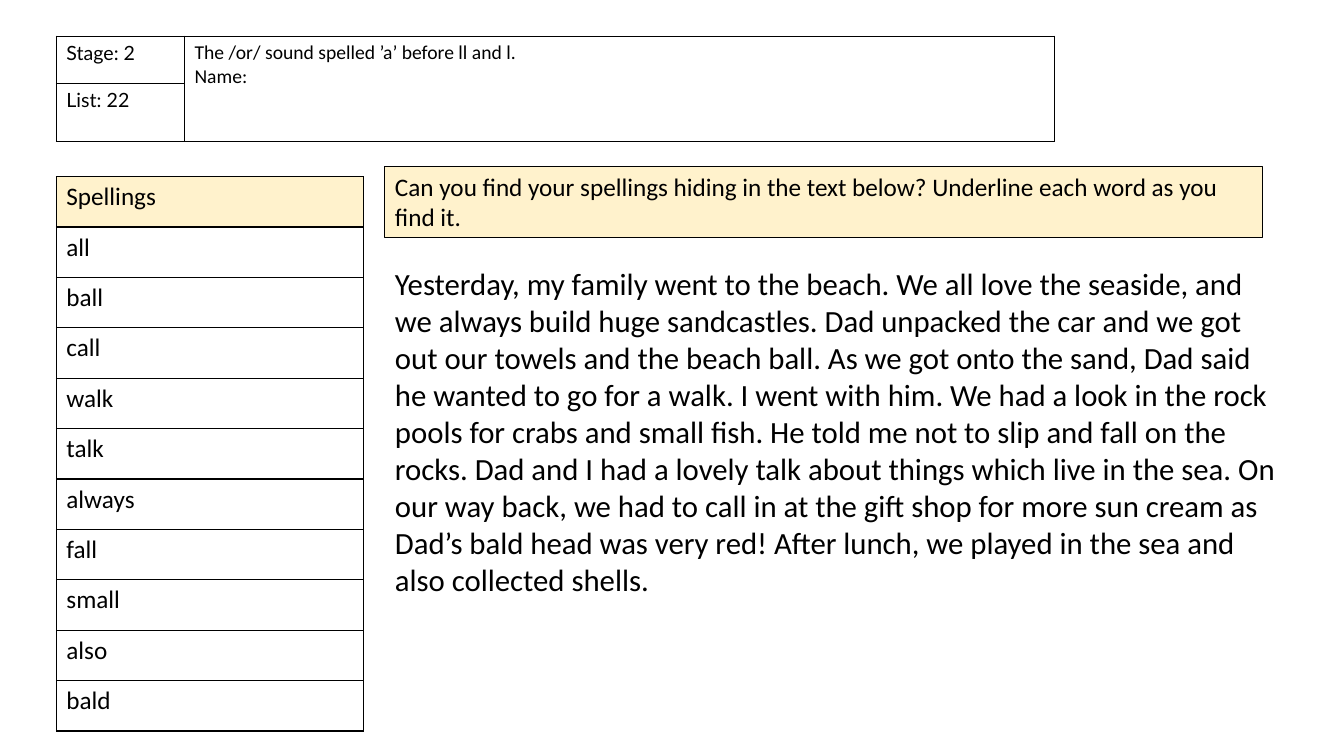
from dataclasses import dataclass

from lxml.etree import SubElement
from pptx import Presentation
from pptx.dml.color import RGBColor
from pptx.enum.text import MSO_ANCHOR, MSO_AUTO_SIZE, PP_ALIGN
from pptx.oxml.ns import qn
from pptx.util import Cm, Pt

BLACK = "000000"
CREAM = "FFF2CC"
SPELLINGS = ["all", "ball", "call", "walk", "talk", "always", "fall", "small", "also", "bald"]
INSTRUCTION = ("Can you find your spellings hiding in the text below? "
               "Underline each word as you find it.")
PASSAGE = (
    "Yesterday, my family went to the beach. We all love the seaside, and we always build huge "
    "sandcastles. Dad unpacked the car and we got out our towels and the beach ball. As we got "
    "onto the sand, Dad said he wanted to go for a walk. I went with him. We had a look in the "
    "rock pools for crabs and small fish. He told me not to slip and fall on the rocks. Dad and "
    "I had a lovely talk about things which live in the sea. On our way back, we had to call in "
    "at the gift shop for more sun cream as Dad’s bald head was very red! After lunch, we played "
    "in the sea and also collected shells."
)


@dataclass
class Grid:
    """A ruled table; lengths in centimetres."""
    left: float
    top: float
    columns: list[float]
    rows: list[float]


@dataclass
class TextArea:
    """A text placeholder's place and content; lengths in centimetres."""
    left: float
    top: float
    width: float
    height: float
    text: str
    size: float


def colour(value: str) -> RGBColor:
    return RGBColor.from_string(value)


def format_text(text_frame, size: float, font_name: str) -> None:
    for paragraph in text_frame.paragraphs:
        paragraph.alignment = PP_ALIGN.LEFT
        paragraph.font.size = Pt(size)
        paragraph.font.name = font_name
        paragraph.font.color.rgb = colour(BLACK)


def fill_cell(cell, text: str, size: float, font_name: str) -> None:
    cell.text = text
    format_text(cell.text_frame, size, font_name)


def draw_grid(slide, grid: Grid):
    """Add a table with plain cells and thin black rules."""
    frame = slide.shapes.add_table(len(grid.rows), len(grid.columns), Cm(grid.left), Cm(grid.top),
                                   Cm(sum(grid.columns)), Cm(sum(grid.rows)))
    table = frame.table
    table.first_row = False
    table.horz_banding = False
    for column, width in zip(table.columns, grid.columns):
        column.width = Cm(width)
    for row, height in zip(table.rows, grid.rows):
        row.height = Cm(height)
    for cell in table.iter_cells():
        properties = cell._tc.get_or_add_tcPr()
        for side in ("a:lnL", "a:lnR", "a:lnT", "a:lnB"):
            border = SubElement(properties, qn(side), w=str(Pt(1)))
            border_fill = SubElement(border, qn("a:solidFill"))
            SubElement(border_fill, qn("a:srgbClr"), val=BLACK)
        cell.fill.background()
    return table


def write_area(placeholder, area: TextArea) -> None:
    """Move a placeholder and set its single unbulleted paragraph."""
    placeholder.left, placeholder.top = Cm(area.left), Cm(area.top)
    placeholder.width, placeholder.height = Cm(area.width), Cm(area.height)
    text_frame = placeholder.text_frame
    text_frame.text = area.text
    text_frame.word_wrap = True
    text_frame.auto_size = MSO_AUTO_SIZE.NONE
    text_frame.vertical_anchor = MSO_ANCHOR.TOP
    paragraph = text_frame.paragraphs[0]
    paragraph.line_spacing = 1.0
    paragraph.space_before = Pt(0)
    properties = paragraph._p.get_or_add_pPr()
    properties.set("marL", "0")
    properties.set("indent", "0")
    SubElement(properties, qn("a:buNone"))
    format_text(text_frame, area.size, "Calibri")


def main() -> None:
    presentation = Presentation()
    presentation.slide_width, presentation.slide_height = Cm(33.87), Cm(19.05)
    slide = presentation.slides.add_slide(presentation.slide_layouts[1])

    # Spelling list
    words = ["Spellings", *SPELLINGS]
    spelling_table = draw_grid(slide, Grid(1.42, 4.45, [7.75], [1.27] * len(words)))
    for cell, word in zip(spelling_table.iter_cells(), words):
        fill_cell(cell, word, 18, "Calibri")
    heading_fill = spelling_table.cell(0, 0).fill
    heading_fill.solid()
    heading_fill.fore_color.rgb = colour(CREAM)

    # Worksheet header
    header = draw_grid(slide, Grid(1.42, 0.91, [3.23, 21.92], [1.19, 1.47]))
    header.cell(0, 1).merge(header.cell(1, 1))
    fill_cell(header.cell(0, 0), "Stage: 2", 14, "Lato")
    fill_cell(header.cell(1, 0), "List: 22", 14, "Lato")
    fill_cell(header.cell(0, 1), "The /or/ sound spelled ’a’ before ll and l.\nName:", 14, "Calibri")

    # Reading passage
    write_area(slide.placeholders[1], TextArea(9.7, 6.55, 22.78, 11.53, PASSAGE, 22))

    # Instruction
    title = slide.shapes.title
    write_area(title, TextArea(9.7, 4.19, 22.12, 1.8, INSTRUCTION, 18))
    title.fill.solid()
    title.fill.fore_color.rgb = colour(CREAM)
    title.line.color.rgb = colour(BLACK)
    title.line.width = Pt(0.75)

    presentation.save("out.pptx")


if __name__ == "__main__":
    main()
